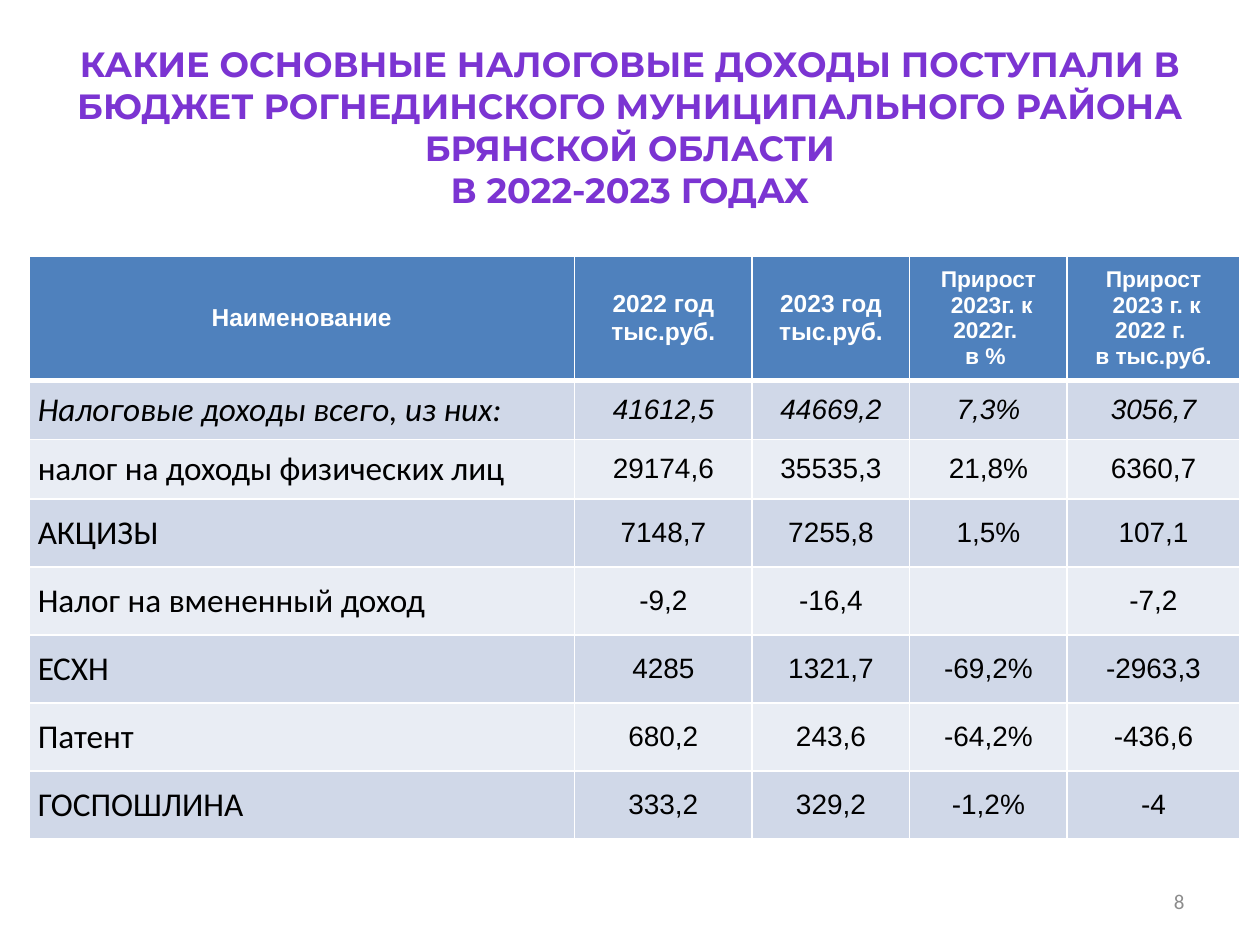
"""Build the slide on the tax revenues of the Rognedinsky district in 2022-2023."""
from lxml import etree
from pptx import Presentation
from pptx.dml.color import RGBColor
from pptx.enum.text import MSO_ANCHOR, PP_ALIGN
from pptx.oxml.ns import qn
from pptx.util import Inches, Pt

LEFT, CENTER, RIGHT = PP_ALIGN.LEFT, PP_ALIGN.CENTER, PP_ALIGN.RIGHT
TOP, MIDDLE = MSO_ANCHOR.TOP, MSO_ANCHOR.MIDDLE

COLORS = {
    "title": "7B34D2",
    "header": "4F81BD",
    "odd": "D0D8E8",
    "even": "E9EDF4",
    "white": "FFFFFF",
    "black": "000000",
    "number": "8C8C8C",
}
TITLE = (
    "КАКИЕ ОСНОВНЫЕ НАЛОГОВЫЕ ДОХОДЫ ПОСТУПАЛИ В "
    "БЮДЖЕТ РОГНЕДИНСКОГО МУНИЦИПАЛЬНОГО РАЙОНА "
    "БРЯНСКОЙ ОБЛАСТИ\vВ 2022-2023 ГОДАХ"
)
PAGE_NUMBER = "8"
HEADERS = [
    ("Наименование", 14),
    ("2022 год\nтыс.руб.", 14),
    ("2023 год\nтыс.руб.", 14),
    ("Прирост\n 2023г. к 2022г. \nв % ", 13),
    ("Прирост\n 2023 г. к 2022 г. \nв тыс.руб.", 13),
]
REVENUES = [
    ("Налоговые доходы всего, из них:", "41612,5", "44669,2", "7,3%", "3056,7"),
    ("налог на доходы физических лиц", "29174,6", "35535,3", "21,8%", "6360,7"),
    ("АКЦИЗЫ", "7148,7", "7255,8", "1,5%", "107,1"),
    ("Налог на вмененный доход", "-9,2", "-16,4", "", "-7,2"),
    ("ЕСХН", "4285", "1321,7", "-69,2%", "-2963,3"),
    ("Патент", "680,2", "243,6", "-64,2%", "-436,6"),
    ("ГОСПОШЛИНА", "333,2", "329,2", "-1,2%", "-4"),
]
COLUMN_WIDTHS = [4.33, 1.41, 1.25, 1.25, 1.37]
ROW_HEIGHTS = [0.99] + [0.47] * 2 + [0.54] * 5
TABLE_LEFT, TABLE_TOP = 0.23, 2.03


def write(frame, text, font, size, color, align, bold=False, italic=False):
    frame.text = text
    for para in frame.paragraphs:
        para.alignment = align
        for span in para.runs:
            span.font.name = font
            span.font.size = Pt(size)
            span.font.bold = bold
            span.font.italic = italic
            span.font.color.rgb = RGBColor.from_string(COLORS[color])


def add_borders(cell, top, bottom):
    properties = cell._tc.get_or_add_tcPr()
    for side, width in (("L", 1), ("R", 1), ("T", top), ("B", bottom)):
        line = etree.SubElement(properties, qn(f"a:ln{side}"), w=str(Pt(width)))
        fill = etree.SubElement(line, qn("a:solidFill"))
        etree.SubElement(fill, qn("a:srgbClr"), val=COLORS["white"])


def style_cell(cell, row):
    add_borders(cell, 3 if row == 1 else 1, 3 if row == 0 else 1)
    shade = "header" if row == 0 else "odd" if row % 2 else "even"
    cell.fill.solid()
    cell.fill.fore_color.rgb = RGBColor.from_string(COLORS[shade])
    cell.vertical_anchor = MIDDLE


def add_title(page):
    title = page.shapes.title
    title.left, title.top = Inches(0), Inches(0.29)
    title.width, title.height = Inches(10), Inches(1.45)
    title.text_frame.vertical_anchor = TOP
    write(title.text_frame, TITLE, "Montserrat", 20, "title", CENTER, bold=True)


def add_revenue_table(page):
    table = page.shapes.add_table(
        len(ROW_HEIGHTS), len(COLUMN_WIDTHS),
        Inches(TABLE_LEFT), Inches(TABLE_TOP),
        Inches(sum(COLUMN_WIDTHS)), Inches(sum(ROW_HEIGHTS)),
    ).table
    for column, width in zip(table.columns, COLUMN_WIDTHS):
        column.width = Inches(width)
    for row, height in zip(table.rows, ROW_HEIGHTS):
        row.height = Inches(height)

    for column, (text, size) in enumerate(HEADERS):
        cell = table.cell(0, column)
        style_cell(cell, 0)
        write(cell.text_frame, text, "Arial", size, "white", CENTER, bold=True)

    for row, values in enumerate(REVENUES, 1):
        for column, text in enumerate(values):
            cell = table.cell(row, column)
            style_cell(cell, row)
            font, size, align = ("Arial", 16, CENTER) if column else ("Calibri", 19, LEFT)
            write(cell.text_frame, text, font, size, "black", align, italic=row == 1)
        name = table.cell(row, 0)
        name.margin_left = name.margin_right = Inches(0.07)
        name.margin_top = name.margin_bottom = Inches(0.07)


def add_page_number(page):
    box = page.shapes.add_textbox(Inches(7.17), Inches(6.95), Inches(2.33), Inches(0.4))
    box.text_frame.word_wrap = True
    box.text_frame.vertical_anchor = MIDDLE
    write(box.text_frame, PAGE_NUMBER, "Calibri", 12, "number", RIGHT)


def main():
    deck = Presentation()
    deck.slide_width, deck.slide_height = Inches(10), Inches(7.5)
    page = deck.slides.add_slide(deck.slide_layouts[5])
    add_title(page)
    add_revenue_table(page)
    add_page_number(page)
    deck.save("out.pptx")


if __name__ == "__main__":
    main()
